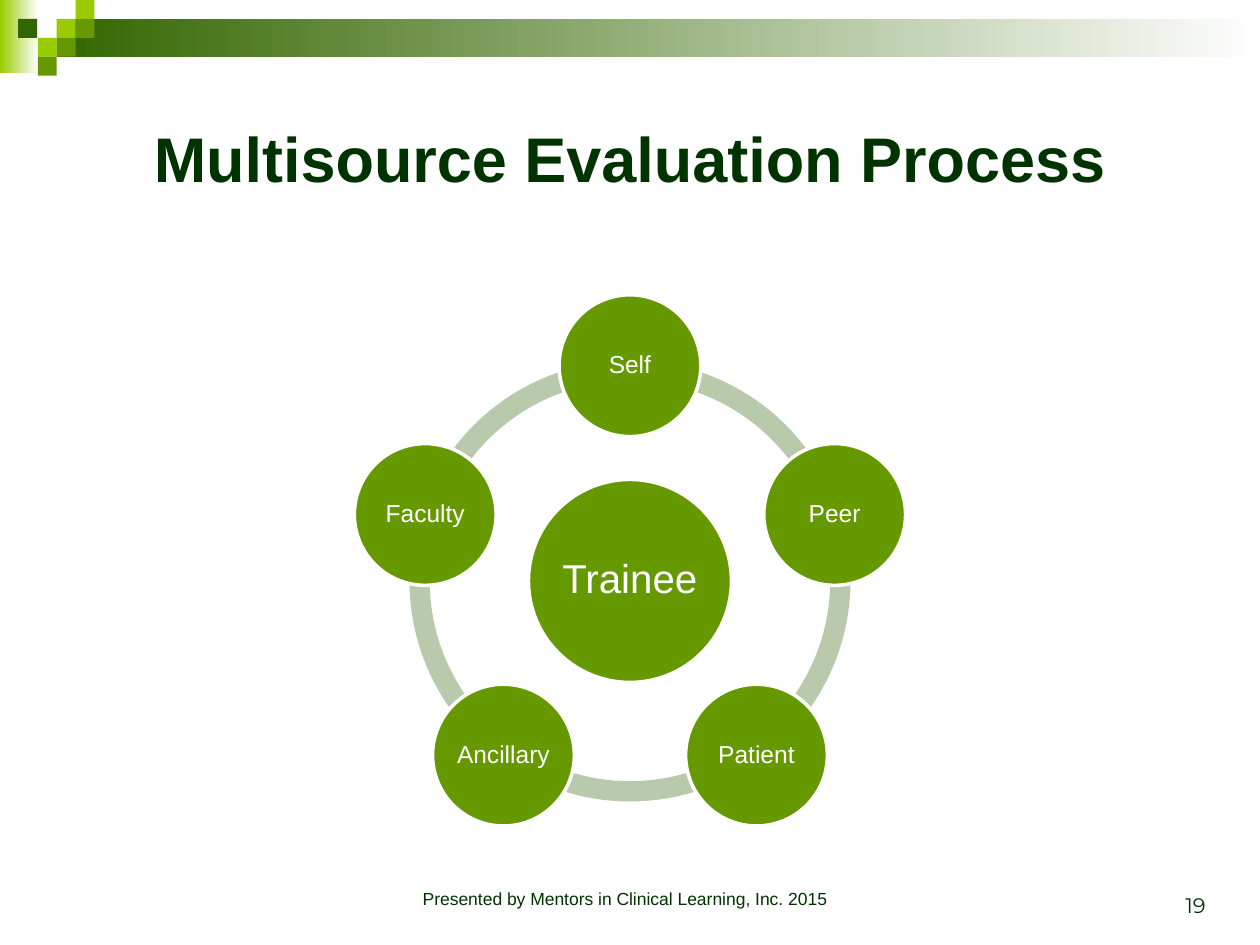
from math import cos, radians, sin

from pptx import Presentation
from pptx.dml.color import RGBColor
from pptx.enum.shapes import MSO_SHAPE
from pptx.enum.text import MSO_ANCHOR, PP_ALIGN
from pptx.util import Pt

RECT, OVAL, ARC = MSO_SHAPE.RECTANGLE, MSO_SHAPE.OVAL, MSO_SHAPE.BLOCK_ARC
TOP, MID, LOW = MSO_ANCHOR.TOP, MSO_ANCHOR.MIDDLE, MSO_ANCHOR.BOTTOM
MIDDLE, RIGHT = PP_ALIGN.CENTER, PP_ALIGN.RIGHT
rgb = RGBColor.from_string
DARK, GREEN, LIME, INK = "336600", "669900", "99CC00", "003300"
WHITE, PALE = "FFFFFF", "B8CAAB"


def draw(kind, x, y, w, h, color, fade=False):
    shape = slide.shapes.add_shape(kind, Pt(x), Pt(y), Pt(w), Pt(h))
    shape.shadow.inherit = False
    shape.line.fill.background()
    if fade:
        shape.fill.gradient()
        shape.fill.gradient_angle = 0
        for stop, tone in zip(shape.fill.gradient_stops, (color, WHITE)):
            stop.color.rgb = rgb(tone)
    else:
        shape.fill.solid()
        shape.fill.fore_color.rgb = rgb(color)
    return shape


def write(shape, text, size, color, align=MIDDLE, anchor=MID, font="Arial", bold=False):
    frame = shape.text_frame
    frame.text = text
    frame.word_wrap = True
    frame.vertical_anchor = anchor
    para = frame.paragraphs[0]
    para.alignment = align
    face = para.runs[0].font
    face.name, face.size, face.bold = font, Pt(size), bold
    face.color.rgb = rgb(color)
    return frame


prs = Presentation()
prs.slide_width, prs.slide_height = Pt(720), Pt(540)
slide = prs.slides.add_slide(prs.slide_layouts[5])

draw(RECT, 0, 0, 22, 42, LIME, fade=True)
draw(RECT, 32.4, 10.8, 687.6, 21.6, DARK, fade=True)
tiles = [
    (32.4, 10.8, LIME), (43.2, 0, LIME), (43.2, 10.8, GREEN), (21.6, 21.6, LIME),
    (10.4, 10.8, DARK), (32.4, 21.6, GREEN), (21.6, 32.4, GREEN),
]
for x, y, color in tiles:
    draw(RECT, x, y, 10.8, 10.8, color)

title = slide.shapes.title
title.left, title.top, title.width, title.height = Pt(36), Pt(36), Pt(648), Pt(108)
write(title, "Multisource Evaluation Process", 36, INK, bold=True)

mid_x, mid_y, ring, orbit = 360, 332, 126, 123
names = ["Self", "Peer", "Patient", "Ancillary", "Faculty"]
step = 360 / len(names)
turns = [270 + step * i for i in range(len(names))]

for turn in turns:
    arc = draw(ARC, mid_x - ring, mid_y - ring, 2 * ring, 2 * ring, PALE)
    arc.adjustments[0] = turn % 360 * 0.6
    arc.adjustments[1] = (turn + step) % 360 * 0.6
    arc.adjustments[2] = 0.046

nodes = [("Trainee", mid_x, mid_y, 116, 23)]
for name, turn in zip(names, turns):
    angle = radians(turn)
    nodes.append((name, mid_x + orbit * cos(angle), mid_y + orbit * sin(angle), 81, 14))

for name, x, y, size, points in nodes:
    node = draw(OVAL, x - size / 2, y - size / 2, size, size, GREEN)
    node.line.color.rgb = rgb(WHITE)
    node.line.width = Pt(2)
    frame = write(node, name, points, WHITE)
    frame.margin_left = frame.margin_right = Pt(1.5)
    frame.margin_top = frame.margin_bottom = Pt(1.5)
    frame.paragraphs[0].line_spacing = 0.9

page = slide.shapes.add_textbox(Pt(528), Pt(492), Pt(168), Pt(36))
write(page, "19", 12, INK, RIGHT, LOW, "Montserrat")
foot = slide.shapes.add_textbox(Pt(198), Pt(504), Pt(318), Pt(24))
write(foot, "Presented by Mentors in Clinical Learning, Inc. 2015", 10, INK, anchor=TOP)

prs.save("out.pptx")
